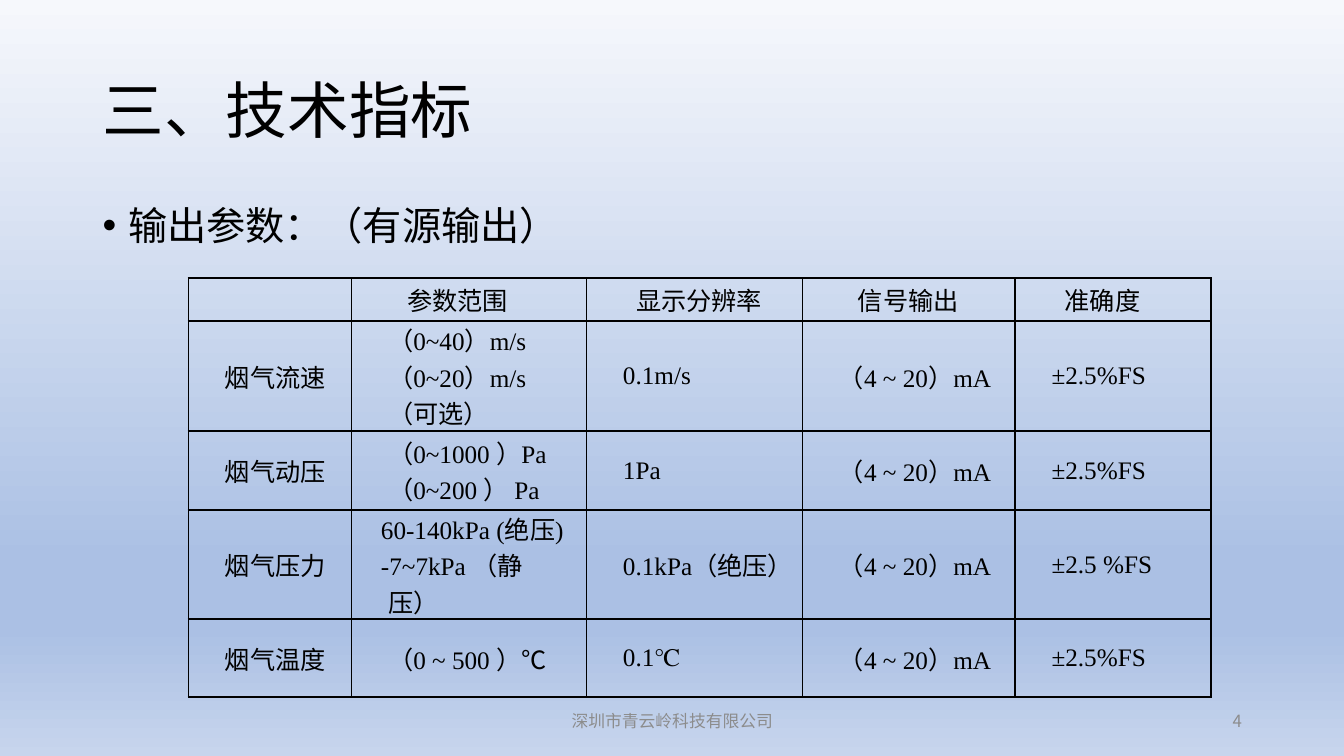
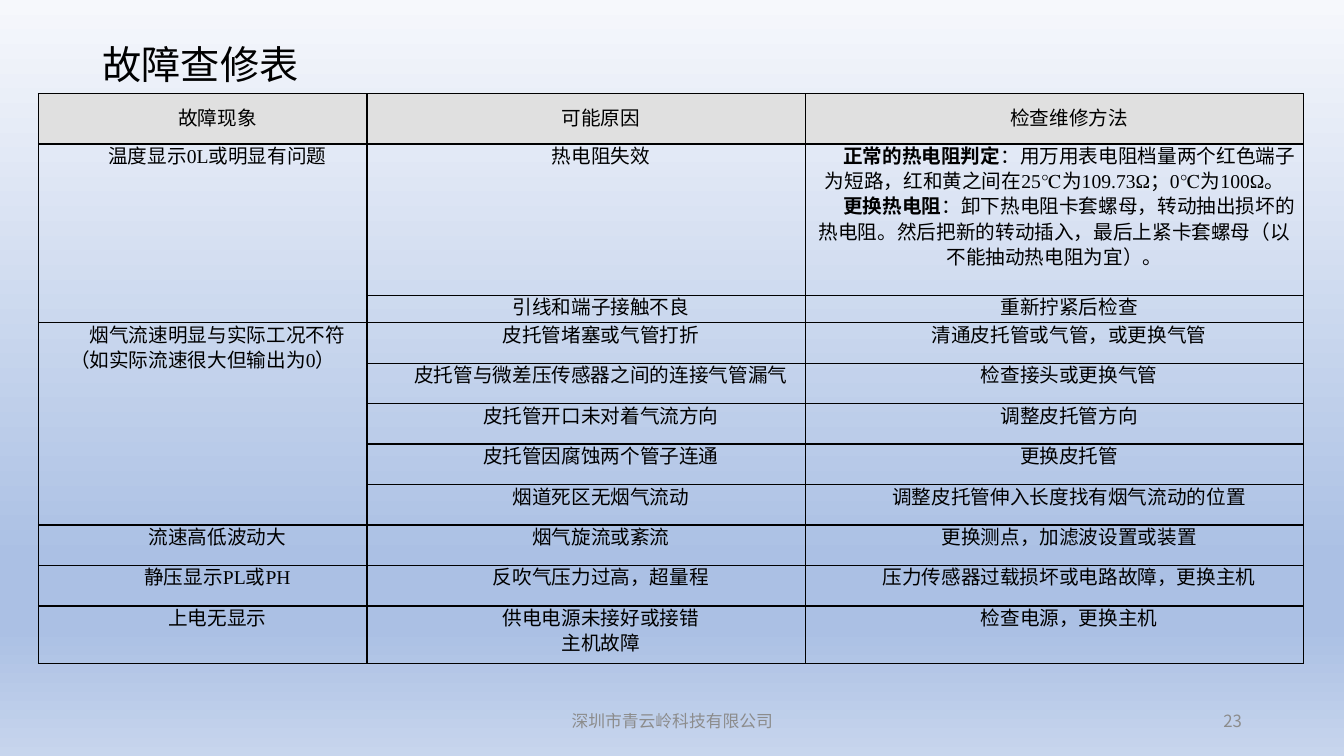
from lxml import etree
from pptx import Presentation
from pptx import util as u
from pptx.dml import color
from pptx.enum import text
from pptx.oxml import ns

INK = {"text": "000000", "foot": "8C8C8C", "head": "E0E0E0"}
FADE = {0: "F6F8FC", 74: "ABC0E4", 83: "ABC0E4", 100: "C7D5ED"}
SANS, SERIF = "Noto Sans CJK SC", "Times New Roman"
LEFT, MID, RIGHT = text.PP_ALIGN.LEFT, text.PP_ALIGN.CENTER, text.PP_ALIGN.RIGHT
TOP, CORE = text.MSO_ANCHOR.TOP, text.MSO_ANCHOR.MIDDLE
FIRM = "深圳市青云岭科技有限公司"


def put(frame, words, size=18, font=SANS, tint="text", align=LEFT, lead=None,
        edge=0, dent=0, before=None, mark=None):
    for n, line in enumerate(words.split("\n")):
        para = frame.paragraphs[0] if n == 0 else frame.add_paragraph()
        para.alignment = align
        para.line_spacing = lead
        para.space_before = before
        props = para._p.get_or_add_pPr()
        props.set("marL", str(u.Cm(edge)))
        props.set("indent", str(u.Cm(dent)))
        if mark:
            etree.SubElement(props, ns.qn("a:buFont"), typeface="Arial")
            etree.SubElement(props, ns.qn("a:buChar"), char=mark)
        parts = line.split("|")
        for k, part in enumerate(parts):
            for j, piece in enumerate(part.split("\v")):
                if j:
                    para.add_line_break()
                run = para.add_run()
                run.text = piece
                run.font.size = u.Pt(size)
                run.font.name = font
                run.font.bold = k < len(parts) - 1
                run.font.color.rgb = color.RGBColor.from_string(INK[tint])
                etree.SubElement(run._r.rPr, ns.qn("a:ea"), typeface=SANS)


def grid(slide, left, top, cols, rows, data, pad, thick, bars, head, form, odd):
    frame = slide.shapes.add_table(len(rows), len(cols), u.Cm(left), u.Cm(top),
                                   u.Cm(sum(cols)), u.Cm(sum(rows)))
    table = frame.table
    table.first_row = table.horz_banding = False
    for col, wide in zip(table.columns, cols):
        col.width = u.Cm(wide)
    for r, (row, tall) in enumerate(zip(table.rows, rows)):
        row.height = u.Cm(tall)
        for c, cell in enumerate(row.cells):
            cell.margin_left = cell.margin_right = u.Cm(pad)
            cell.margin_top = cell.margin_bottom = 0
            cell.vertical_anchor = CORE if r == 0 or not head else TOP
            if head and r == 0:
                cell.fill.solid()
                cell.fill.fore_color.rgb = color.RGBColor.from_string(INK[head])
            else:
                cell.fill.background()
            heavy = [c in bars, c + 1 in bars, r in thick, r + 1 in thick]
            for n, (side, bold) in enumerate(zip("LRTB", heavy)):
                line = etree.Element(ns.qn("a:ln" + side), w=str(u.Pt(1.5 if bold else 1)))
                fill = etree.SubElement(line, ns.qn("a:solidFill"))
                etree.SubElement(fill, ns.qn("a:srgbClr"), val=INK["text"])
                cell._tc.get_or_add_tcPr().insert(n, line)
            if data[r][c]:
                put(cell.text_frame, data[r][c], **{**form, **odd.get((r, c), {})})
    return table


RANGE = [
    ["", "参数范围", "显示分辨率", "信号输出", "准确度"],
    ["烟气流速", "（0~40）m/s\n（0~20）m/s\n（可选）", "0.1m/s", "（4 ~ 20）mA", "±2.5%FS"],
    ["烟气动压", "（0~1000 ）Pa\n（0~200 ） Pa", "1Pa", "（4 ~ 20）mA", "±2.5%FS"],
    ["烟气压力", "60-140kPa (绝压)\n-7~7kPa （静\v压）", "0.1kPa（绝压）", "（4 ~ 20）mA", "±2.5 %FS"],
    ["烟气温度", "（0 ~ 500 ）℃", "0.1℃", "（4 ~ 20）mA", "±2.5%FS"],
]
FAULT = [
    ["故障现象", "可能原因", "检查维修方法"],
    ["温度显示0L或明显有问题", "热电阻失效",
     "正常的热电阻判定|：用万用表电阻档量两个红色端子为短路，红和黄之间在25℃为109.73Ω；0℃为100Ω。\n"
     "更换热电阻|：卸下热电阻卡套螺母，转动抽出损坏的热电阻。然后把新的转动插入，"
     "最后上紧卡套螺母（以不能抽动热电阻为宜）。"],
    ["", "引线和端子接触不良", "重新拧紧后检查"],
    ["烟气流速明显与实际工况不符（如实际流速很大但输出为0）", "皮托管堵塞或气管打折",
     "清通皮托管或气管，或更换气管"],
    ["", "皮托管与微差压传感器之间的连接气管漏气", "检查接头或更换气管"],
    ["", "皮托管开口未对着气流方向", "调整皮托管方向"],
    ["", "皮托管因腐蚀两个管子连通", "更换皮托管"],
    ["", "烟道死区无烟气流动", "调整皮托管伸入长度找有烟气流动的位置"],
    ["流速高低波动大", "烟气旋流或紊流", "更换测点，加滤波设置或装置"],
    ["静压显示PL或PH", "反吹气压力过高，超量程", "压力传感器过载损坏或电路故障，更换主机"],
    ["上电无显示", "供电电源未接好或接错\n主机故障", "检查电源，更换主机"],
]

deck = Presentation()
deck.slide_width, deck.slide_height = u.Cm(33.87), u.Cm(19.05)

back = deck.slide_master.background.fill
back.gradient()
back.gradient_angle = 270
stops = deck.slide_master.element.find(".//" + ns.qn("a:gsLst"))
for stop in list(stops):
    stops.remove(stop)
for pos, tone in FADE.items():
    stop = etree.SubElement(stops, ns.qn("a:gs"), pos=str(pos * 1000))
    etree.SubElement(stop, ns.qn("a:srgbClr"), val=tone)

BODY = ("输出参数：（有源输出）", (2.34, 5.08, 29.21, 12.09), TOP,
        dict(size=28, lead=0.9, before=u.Pt(10), edge=0.64, dent=-0.64, mark="•"))
PAGES = [("三、技术指标", 44, 3.68, "4", [BODY]), ("故障查修表", 28, 1.35, "23", [])]
slides = []
for title, size, tall, page, more in PAGES:
    slide = deck.slides.add_slide(deck.slide_layouts[6])
    slides.append(slide)
    foot = dict(size=12, tint="foot")
    boxes = [
        (title, (2.34, 1.02, 29.21, tall), CORE, dict(size=size, lead=0.9)),
        *more,
        (FIRM, (11.23, 17.65, 11.43, 1.02), CORE, dict(foot, align=MID)),
        (page, (23.93, 17.65, 7.62, 1.02), CORE, dict(foot, align=RIGHT)),
    ]
    for words, area, anchor, form in boxes:
        frame = slide.shapes.add_textbox(*map(u.Cm, area)).text_frame
        frame.word_wrap = True
        frame.vertical_anchor = anchor
        put(frame, words, **form)

grid(slides[0], 4.75, 7.01, [4.11, 5.92, 5.44, 5.36, 4.93], [1.07, 2.79, 1.98, 2.75, 1.96],
     RANGE, 0.18, {0, 1, 2, 5}, {0, 5}, None, dict(font=SERIF, dent=0.74),
     {(0, 1): dict(dent=1.22), (0, 2): dict(dent=1.07), (0, 3): dict(dent=1.22),
      (0, 4): dict(dent=1.07), (3, 1): dict(edge=0.74, dent=-0.18)})

faults = grid(slides[1], 0.97, 2.36, [8.28, 11.05, 12.55], [1.27, 3.81, 0.69] + [1.02] * 7 + [1.45],
              FAULT, 0.13, set(), set(), "head",
              dict(size=14, font=SERIF, align=MID, lead=u.Pt(18), dent=0.74), {})
for first, last in [(1, 2), (3, 7)]:
    faults.cell(first, 0).merge(faults.cell(last, 0))

deck.save("out.pptx")
